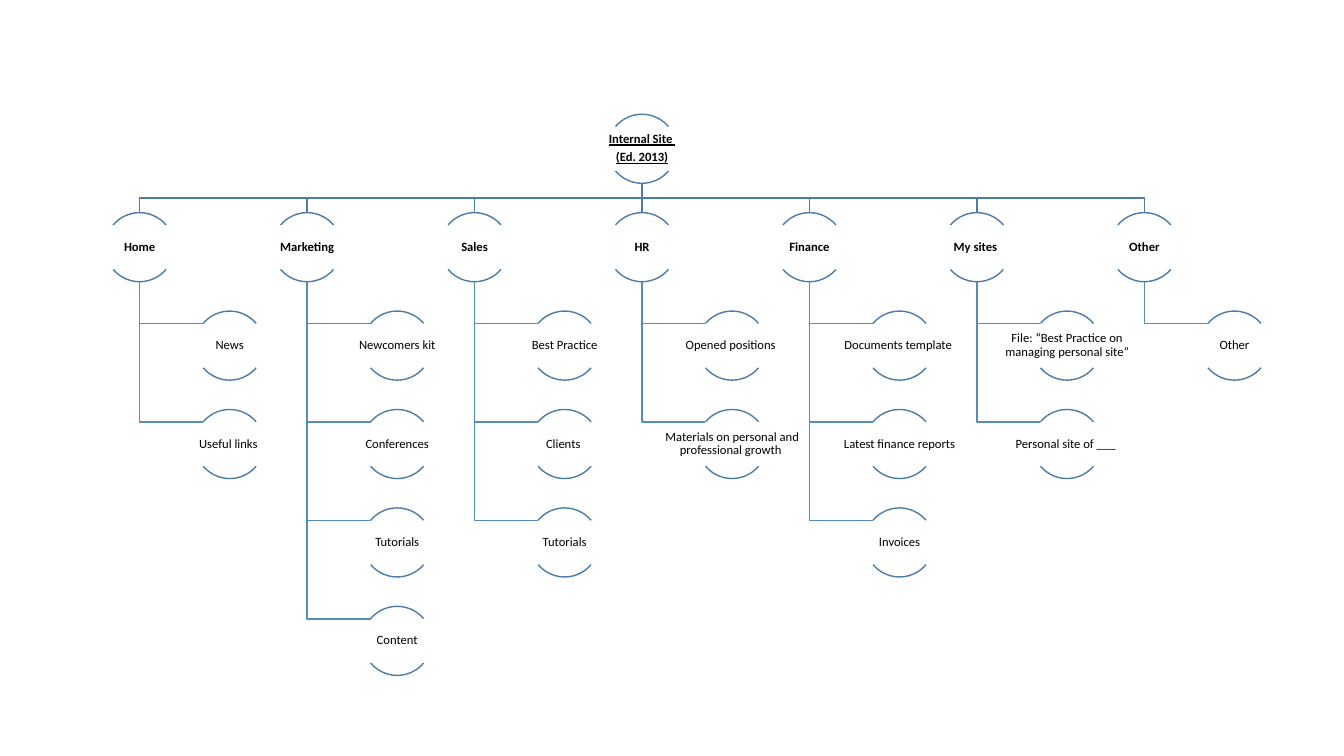
from pptx import Presentation
from pptx.dml.color import RGBColor
from pptx.enum.shapes import MSO_CONNECTOR, MSO_SHAPE
from pptx.enum.text import MSO_ANCHOR, PP_ALIGN
from pptx.oxml.ns import qn
from pptx.util import Cm, Pt
from lxml import etree

# Content
ROOT = ["Internal Site ", "(Ed. 2013)"]
SECTIONS = [
    ("Home", ["News", "Useful links "]),
    ("Marketing", ["Newcomers kit", "Conferences", "Tutorials", "Content"]),
    ("Sales", ["Best Practice", "Clients ", "Tutorials"]),
    ("HR", ["Opened positions ", "Materials on personal and professional growth "]),
    ("Finance", ["Documents template ", "Latest finance reports", "Invoices"]),
    ("My sites ", ["File: “Best Practice on managing personal site”",
                   "Personal site of ___ "]),
    ("Other", ["Other"]),
]

# Style
BLACK = RGBColor(0x00, 0x00, 0x00)
ARC_BLUE = RGBColor(0x49, 0x7C, 0xAB)
BRANCH_BLUE = RGBColor(0x53, 0x8D, 0xC1)
FONT = "Calibri"
ARC = MSO_SHAPE.ARC
STRAIGHT = MSO_CONNECTOR.STRAIGHT
CENTER = PP_ALIGN.CENTER
MIDDLE = MSO_ANCHOR.MIDDLE
ARC_ANGLES = [(132, 192), (24, 84)]  # top and bottom, in units of 5/3 degree

# Layout in centimetres
ROOT_X, ROOT_TOP = 16.18, 2.88
COLUMN_STEP, ROW_STEP = 4.22, 2.48
PAGE_INDENT = 2.27
CIRCLE = 1.74
LABEL_WIDTH, LABEL_HEIGHT = 3.48, 1.11
LABEL_OFFSET = (CIRCLE - LABEL_HEIGHT) / 2
ARC_HALF_WIDTH = 0.67


def row_top(row):
    return ROOT_TOP + row * ROW_STEP


def set_line(shape, color):
    shape.line.color.rgb = color
    shape.line.width = Pt(1)


def add_link(slide, points, color):
    corners = [(Cm(x), Cm(y)) for x, y in points]
    start, end = corners[0], corners[-1]
    if start[0] == end[0]:
        link = slide.shapes.add_connector(STRAIGHT, *start, *end)
        etree.SubElement(link._element.spPr, qn("a:effectLst"))
    else:
        builder = slide.shapes.build_freeform(*start)
        builder.add_line_segments(corners[1:], close=False)
        link = builder.convert_to_shape()
        link.fill.background()
        link.shadow.inherit = False
    set_line(link, color)


def add_node(slide, center_x, top, lines, bold=False, underline=False):
    for angles in ARC_ANGLES:
        arc = slide.shapes.add_shape(
            ARC, Cm(center_x - CIRCLE / 2), Cm(top), Cm(CIRCLE), Cm(CIRCLE))
        arc.adjustments[0], arc.adjustments[1] = angles
        arc.fill.background()
        arc.shadow.inherit = False
        set_line(arc, ARC_BLUE)

    label = slide.shapes.add_textbox(
        Cm(center_x - LABEL_WIDTH / 2), Cm(top + LABEL_OFFSET),
        Cm(LABEL_WIDTH), Cm(LABEL_HEIGHT))
    frame = label.text_frame
    frame.word_wrap = True
    frame.vertical_anchor = MIDDLE
    frame.margin_left = frame.margin_right = Cm(0.02)
    frame.margin_top = frame.margin_bottom = Cm(0.02)
    frame.text = "\n".join(lines)
    for paragraph in frame.paragraphs:
        paragraph.alignment = CENTER
        paragraph.line_spacing = 0.9
        paragraph.space_after = Pt(3.15)
        font = paragraph.font
        font.name, font.size, font.color.rgb = FONT, Pt(9), BLACK
        font.bold, font.underline = bold, underline


def main():
    presentation = Presentation()
    presentation.slide_width, presentation.slide_height = Cm(33.87), Cm(19.05)
    slide = presentation.slides.add_slide(presentation.slide_layouts[6])

    root_bottom = ROOT_TOP + CIRCLE
    section_top = row_top(1)
    section_bottom = section_top + CIRCLE
    bus_y = (root_bottom + section_top) / 2
    middle = len(SECTIONS) // 2
    columns = [(ROOT_X + (index - middle) * COLUMN_STEP, name, pages)
               for index, (name, pages) in enumerate(SECTIONS)]

    # Links, behind the nodes
    for x, name, pages in columns:
        add_link(slide, [(ROOT_X, root_bottom), (ROOT_X, bus_y),
                         (x, bus_y), (x, section_top)], ARC_BLUE)
        for row in range(2, len(pages) + 2):
            y = row_top(row) + LABEL_OFFSET
            add_link(slide, [(x, section_bottom), (x, y),
                             (x + PAGE_INDENT - ARC_HALF_WIDTH, y)], BRANCH_BLUE)

    # Root, sections and their pages
    add_node(slide, ROOT_X, ROOT_TOP, ROOT, bold=True, underline=True)
    for x, name, pages in columns:
        add_node(slide, x, section_top, [name], bold=True)
        for row, page in enumerate(pages, start=2):
            add_node(slide, x + PAGE_INDENT, row_top(row), [page])

    presentation.save("out.pptx")


if __name__ == "__main__":
    main()
